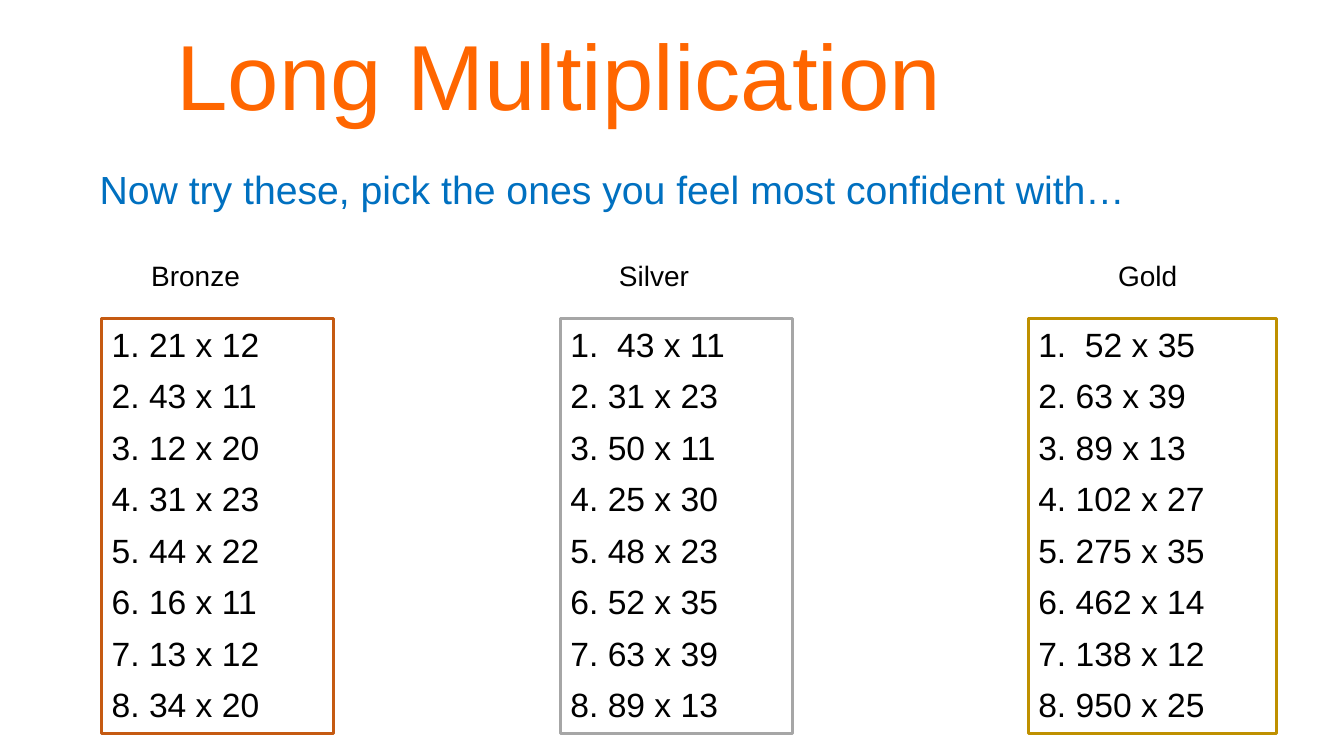
from pptx import Presentation
from pptx.dml.color import RGBColor
from pptx.enum.shapes import MSO_SHAPE
from pptx.enum.text import MSO_ANCHOR, MSO_AUTO_SIZE, PP_ALIGN
from pptx.util import Inches, Pt

COLORS = {
    "title": "FF6600",
    "instruction": "0070C0",
    "text": "000000",
    "Bronze": "C55A11",
    "Silver": "A6A6A6",
    "Gold": "BF9000",
}

HEADINGS = [
    ("Long Multiplication", (1.65, 0.13, 9.53, 1.21), 66, "title"),
    ("Now try these, pick the ones you feel most confident with…",
     (0.89, 1.59, 10.57, 0.57), 28, "instruction"),
]

LEVELS = [
    ("Bronze", (1.4, 1.52), (1.01, 2.3),
     ["21 x 12", "43 x 11", "12 x 20", "31 x 23",
      "44 x 22", "16 x 11", "13 x 12", "34 x 20"]),
    ("Silver", (6.04, 1.25), (5.56, 2.3),
     [" 43 x 11", "31 x 23", "50 x 11", "25 x 30",
      "48 x 23", "52 x 35", "63 x 39", "89 x 13"]),
    ("Gold", (10.99, 1.25), (10.2, 2.46),
     [" 52 x 35", "63 x 39", "89 x 13", "102 x 27",
      "275 x 35", "462 x 14", "138 x 12", "950 x 25"]),
]

LABEL_TOP, LABEL_HEIGHT = 2.52, 0.44
SUMS_TOP, SUMS_HEIGHT = 3.16, 4.12


def rgb(name):
    return RGBColor.from_string(COLORS[name])


def write(frame, lines, size, color):
    frame.word_wrap = True
    frame.auto_size = MSO_AUTO_SIZE.SHAPE_TO_FIT_TEXT
    frame.vertical_anchor = MSO_ANCHOR.TOP
    frame.text = "\n".join(lines)
    for paragraph in frame.paragraphs:
        paragraph.alignment = PP_ALIGN.LEFT
        paragraph.font.name = "Arial"
        paragraph.font.size = Pt(size)
        paragraph.font.color.rgb = rgb(color)


def add_label(slide, text, box, size, color):
    label = slide.shapes.add_textbox(*map(Inches, box))
    write(label.text_frame, [text], size, color)


def add_sums(slide, level, box, sums):
    panel = slide.shapes.add_shape(MSO_SHAPE.RECTANGLE, *map(Inches, box))
    panel.shadow.inherit = False
    panel.fill.background()
    panel.line.color.rgb = rgb(level)
    panel.line.width = Pt(2.25)
    numbered = [f"{number}. {question}" for number, question in enumerate(sums, 1)]
    write(panel.text_frame, numbered, 24, "text")
    for paragraph in panel.text_frame.paragraphs:
        paragraph.space_after = Pt(8)


def main():
    deck = Presentation()
    deck.slide_width, deck.slide_height = Inches(13.33), Inches(7.5)
    slide = deck.slides.add_slide(deck.slide_layouts[6])
    for heading in HEADINGS:
        add_label(slide, *heading)
    for level, (label_left, label_width), (sums_left, sums_width), sums in LEVELS:
        add_label(slide, level, (label_left, LABEL_TOP, label_width, LABEL_HEIGHT), 20, "text")
        add_sums(slide, level, (sums_left, SUMS_TOP, sums_width, SUMS_HEIGHT), sums)
    deck.save("out.pptx")


if __name__ == "__main__":
    main()
